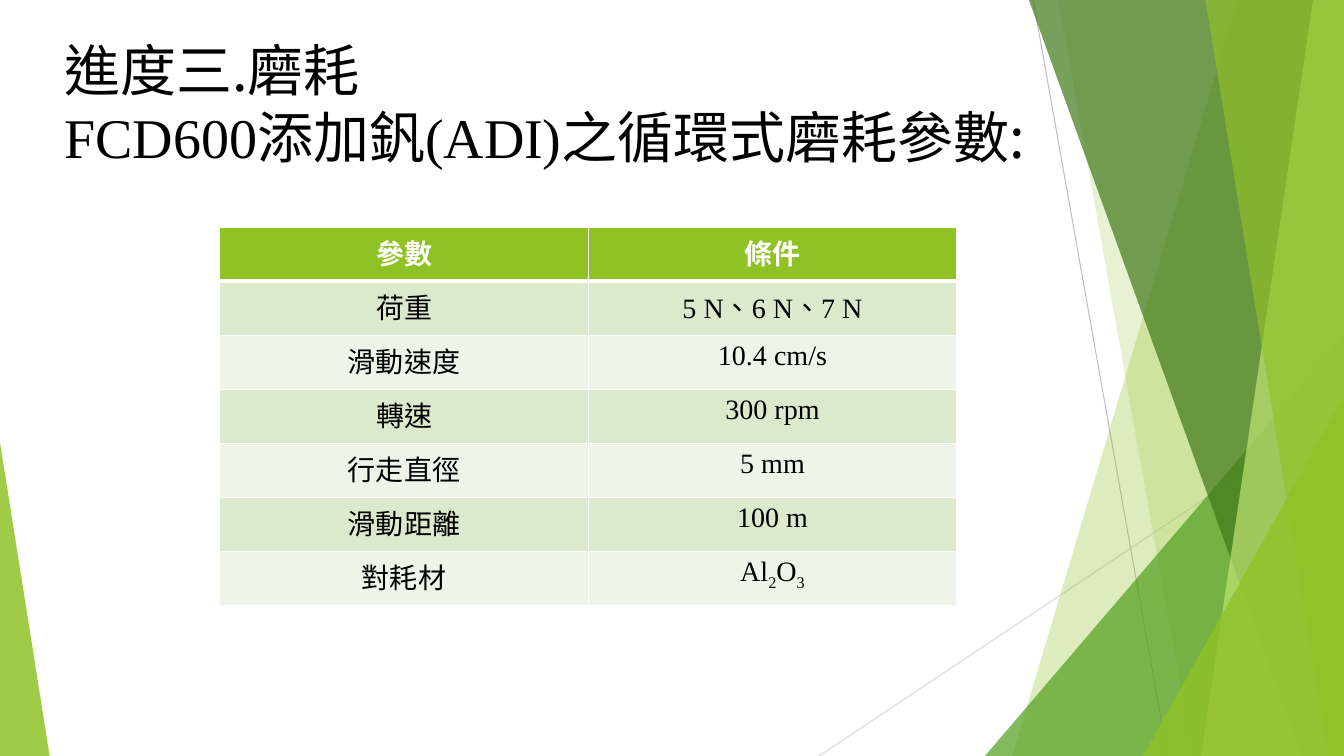
from lxml import etree
from pptx import Presentation
from pptx import util as u
from pptx.dml.color import RGBColor
from pptx.enum import lang, shapes, text
from pptx.oxml import ns

WIDTH, HEIGHT = 960, 540
LATIN, CHINESE = "Times New Roman", "Noto Sans CJK SC"

BLACK = RGBColor(0x00, 0x00, 0x00)
WHITE = RGBColor(0xFF, 0xFF, 0xFF)
LIME = RGBColor(0x90, 0xC2, 0x26)
PALE_LIME = RGBColor(0xC0, 0xE4, 0x74)
GREEN = RGBColor(0x54, 0xA0, 0x21)
DARK_GREEN = RGBColor(0x3F, 0x78, 0x19)
ROW_DARK = RGBColor(0xDB, 0xE9, 0xCD)
ROW_LIGHT = RGBColor(0xEE, 0xF4, 0xE8)
GRAY = RGBColor(0xBF, 0xBF, 0xBF)
LIGHT_GRAY = RGBColor(0xD9, 0xD9, 0xD9)

TITLE_LINES = [
    [("進度三.磨耗", CHINESE)],
    [("FCD600", LATIN), ("添加釩", CHINESE), ("(ADI)", LATIN),
     ("之循環式磨耗參數:", CHINESE)],
]

# Each cell is a list of runs; digits in a formula are subscripts
PARAMETERS = [
    (["參數"], ["條件"]),
    (["荷重"], ["5 N、6 N、7 N"]),
    (["滑動速度"], ["10.4 cm/s"]),
    (["轉速"], ["300 rpm"]),
    (["行走直徑"], ["5 mm"]),
    (["滑動距離"], ["100 m"]),
    (["對耗材"], ["Al", "2", "O", "3"]),
]


def add_child(parent, tag, **attributes):
    return etree.SubElement(parent, ns.qn(tag), **attributes)


def add_run(paragraph, words, size, color, font=LATIN, bold=False):
    run = paragraph.add_run()
    run.text = words
    run.font.size = u.Pt(size)
    run.font.bold = bold
    run.font.color.rgb = color
    run.font.name = font
    run.font.language_id = lang.MSO_LANGUAGE_ID.TRADITIONAL_CHINESE
    add_child(run.font._element, "a:ea", typeface=CHINESE)
    return run


def add_line(slide, start, end, color):
    line = slide.shapes.add_connector(
        shapes.MSO_CONNECTOR.STRAIGHT, *map(u.Pt, start + end))
    line.line.color.rgb = color
    line.line.width = u.Pt(0.75)
    add_child(line._element.spPr, "a:effectLst")


def paint(shape, color, opacity):
    shape.shadow.inherit = False
    shape.line.fill.background()
    shape.fill.solid()
    shape.fill.fore_color.rgb = color
    color_element = shape._element.spPr.find(".//" + ns.qn("a:srgbClr"))
    add_child(color_element, "a:alpha", val=str(opacity * 1000))


def add_band(slide, top_x, bottom_x, color, opacity):
    """Full-height band from a slanted left side to the slide's right edge."""
    builder = slide.shapes.build_freeform(top_x, 0, scale=u.Pt(1))
    builder.add_line_segments(
        [(WIDTH, 0), (WIDTH, HEIGHT), (bottom_x, HEIGHT)], close=True)
    paint(builder.convert_to_shape(), color, opacity)


def add_triangle(slide, left, top, width, apex, color, opacity):
    """Triangle standing on the slide's bottom edge."""
    triangle = slide.shapes.add_shape(
        shapes.MSO_SHAPE.ISOSCELES_TRIANGLE,
        *map(u.Pt, (left, top, width, HEIGHT - top)))
    triangle.adjustments[0] = apex
    paint(triangle, color, opacity)


def add_title(slide):
    box = slide.shapes.add_textbox(*map(u.Pt, (39, 21.6, 720, 104)))
    box.text_frame.word_wrap = True
    box.text_frame.vertical_anchor = text.MSO_ANCHOR.TOP
    paragraph = box.text_frame.paragraphs[0]
    paragraph._p.get_or_add_pPr().set("hangingPunct", "1")
    for index, line in enumerate(TITLE_LINES):
        if index:
            paragraph.add_line_break()
        for words, font in line:
            add_run(paragraph, words, 40, BLACK, font)


def set_borders(cell, bottom_width):
    properties = cell._tc.get_or_add_tcPr()
    widths = {"a:lnL": 1, "a:lnR": 1, "a:lnT": 1, "a:lnB": bottom_width}
    for position, (tag, width) in enumerate(widths.items()):
        border = etree.Element(ns.qn(tag), w=str(u.Pt(width)))
        fill = add_child(border, "a:solidFill")
        add_child(fill, "a:srgbClr", val=str(WHITE))
        properties.insert(position, border)


def fill_cell(cell, runs, row):
    header = row == 0
    cell.fill.solid()
    cell.fill.fore_color.rgb = (
        LIME if header else ROW_DARK if row % 2 else ROW_LIGHT)
    set_borders(cell, 3 if header else 1)
    paragraph = cell.text_frame.paragraphs[0]
    paragraph.alignment = text.PP_ALIGN.CENTER
    for words in runs:
        run = add_run(paragraph, words, 20, WHITE if header else BLACK,
                      bold=header)
        if words.isdigit():
            run.font._element.set("baseline", "-25000")


def add_parameter_table(slide):
    row_count = len(PARAMETERS)
    table = slide.shapes.add_table(
        row_count, 2, *map(u.Pt, (157, 162.3, 526.4, 38.6 * row_count))).table
    for row, cells in enumerate(PARAMETERS):
        for column, runs in enumerate(cells):
            fill_cell(table.cell(row, column), runs, row)


def add_decoration(slide):
    add_line(slide, (738, 0), (834, HEIGHT), GRAY)
    add_line(slide, (WIDTH, 290), (585, HEIGHT), LIGHT_GRAY)
    add_band(slide, 884, 723, LIME, 30)
    add_band(slide, 756, 852, LIME, 20)
    add_triangle(slide, 703.5, 240, 256.5, 1, GREEN, 72)
    add_band(slide, 735, 929.5, DARK_GREEN, 70)
    add_band(slide, 938, 858, PALE_LIME, 70)
    add_band(slide, 861, 949, LIME, 65)
    add_triangle(slide, 816.5, 283, 143.5, 1, LIME, 80)
    add_triangle(slide, 0, 316, 35.5, 0, LIME, 85)


def main():
    presentation = Presentation()
    presentation.slide_width = u.Pt(WIDTH)
    presentation.slide_height = u.Pt(HEIGHT)
    slide = presentation.slides.add_slide(presentation.slide_layouts[6])
    add_decoration(slide)
    add_title(slide)
    add_parameter_table(slide)
    presentation.save("out.pptx")


if __name__ == "__main__":
    main()
